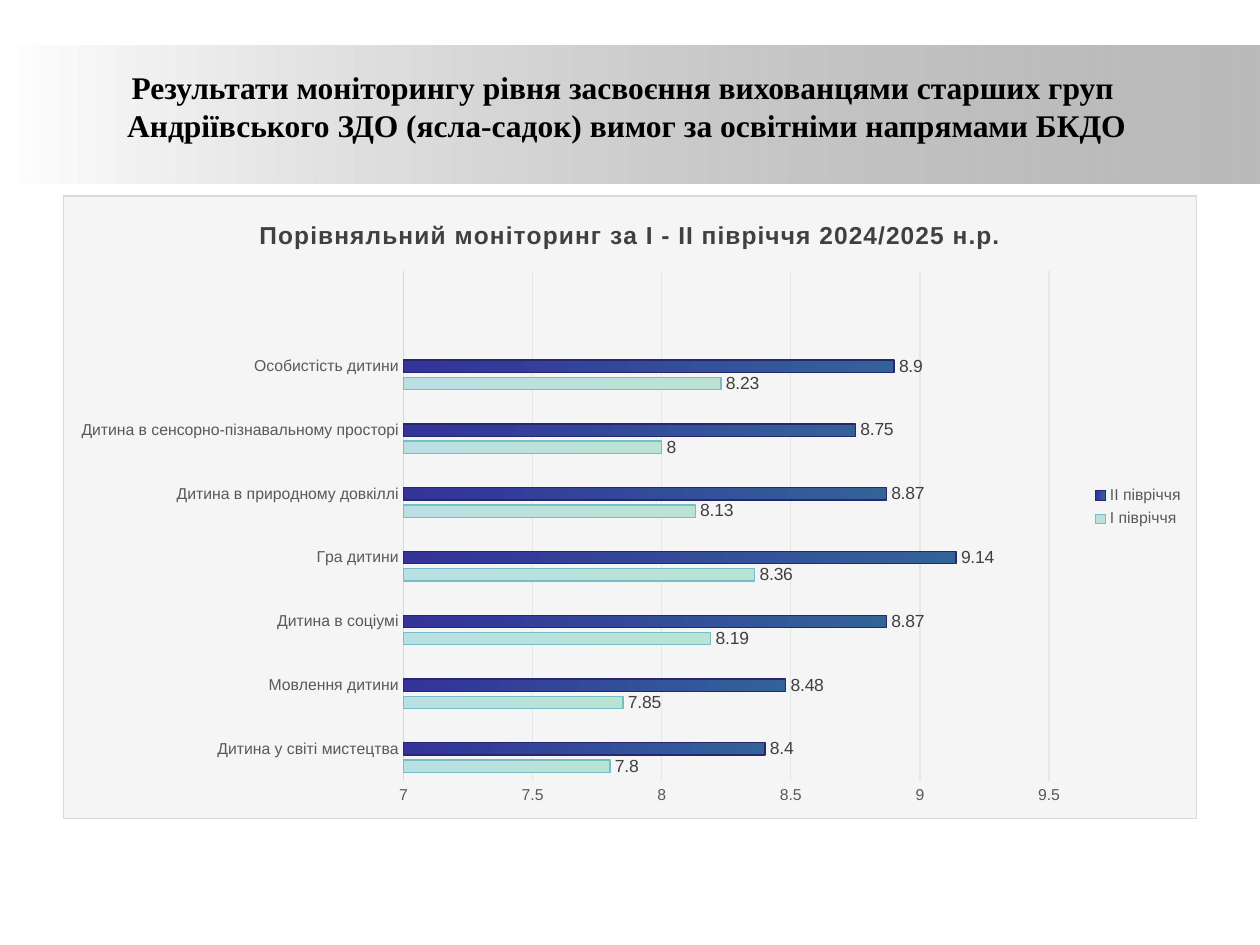
from lxml import etree
from pptx import Presentation
from pptx.chart.data import CategoryChartData
from pptx.dml.color import RGBColor
from pptx.enum.chart import (XL_CHART_TYPE, XL_LABEL_POSITION,
                             XL_LEGEND_POSITION, XL_TICK_MARK)
from pptx.enum.shapes import MSO_SHAPE
from pptx.enum.text import MSO_ANCHOR, PP_ALIGN
from pptx.oxml import parse_xml
from pptx.oxml.ns import nsdecls, qn
from pptx.util import Inches, Pt

TITLE = ("Результати моніторингу рівня засвоєння вихованцями старших груп \v"
         "Андріївського ЗДО (ясла-садок) вимог за освітніми напрямами БКДО")
HEADING = "Порівняльний моніторинг за І - ІІ півріччя 2024/2025 н.р."
AREAS = ["Дитина у світі мистецтва", "Мовлення дитини", "Дитина в соціумі",
         "Гра дитини", "Дитина в природному довкіллі",
         "Дитина в сенсорно-пізнавальному просторі", "Особистість дитини", ""]
# name, values, gradient start, gradient end, outline
TERMS = [
    ("І півріччя", [7.8, 7.85, 8.19, 8.36, 8.13, 8, 8.23, None],
     "BBE3D3", "BBE0E3", "72BFC5"),
    ("ІІ півріччя", [8.4, 8.48, 8.87, 9.14, 8.87, 8.75, 8.9, None],
     "336299", "333399", "262673"),
    ("Ряди 3", [None] * 8, "FFFFFF", "FFFFFF", "BFBFBF"),
]


def rgb(code):
    return RGBColor.from_string(code)


def set_font(font, size, color, bold=False, name="Arial"):
    font.size, font.bold, font.name = Pt(size), bold, name
    font.color.rgb = rgb(color)


def set_line(line, color):
    line.color.rgb = rgb(color)
    line.width = Pt(0.75)


def set_gradient(fill, start, end, angle):
    fill.gradient()
    fill.gradient_angle = angle
    for stop, color, place in zip(fill.gradient_stops, (start, end), (0, 1)):
        stop.color.rgb = rgb(color)
        stop.position = place


def add_band(slide):
    """Add the grey fade behind the title."""
    band = slide.shapes.add_shape(MSO_SHAPE.RECTANGLE, Inches(0), Inches(0.36),
                                  Inches(10), Inches(1.1))
    band.shadow.inherit = False
    band.line.fill.background()
    set_gradient(band.fill, "FFFFFF", "808080", 0)
    end = band._element.spPr.findall(".//" + qn("a:srgbClr"))[-1]
    etree.SubElement(end, qn("a:alpha")).set("val", "54000")
    slide.shapes._spTree.insert(2, band._element)


def set_title(slide):
    title = slide.shapes.title
    title.left, title.top = Inches(0.5), Inches(0.13)
    title.width, title.height = Inches(8.95), Inches(1.42)
    frame = title.text_frame
    frame.text = TITLE
    frame.word_wrap = True
    frame.vertical_anchor = MSO_ANCHOR.MIDDLE
    para = frame.paragraphs[0]
    para.alignment = PP_ALIGN.CENTER
    for run in para.runs:
        set_font(run.font, 18, "000000", True, "Times New Roman")


def style_axes(chart):
    areas, scale = chart.category_axis, chart.value_axis
    for axis in (areas, scale):
        axis.major_tick_mark = axis.minor_tick_mark = XL_TICK_MARK.NONE
        set_font(axis.tick_labels.font, 9, "595959")
    set_line(areas.format.line, "D9D9D9")
    scale.format.line.fill.background()
    scale.minimum_scale, scale.maximum_scale = 7, 9.5
    scale.major_unit = 0.5
    scale.has_major_gridlines = True
    set_line(scale.major_gridlines.format.line, "E6E6E6")


def style_bars(plot):
    plot.gap_width, plot.overlap = 140, -40
    plot.vary_by_categories = False
    for bars, (_, _, start, end, edge) in zip(plot.series, TERMS):
        set_gradient(bars.format.fill, start, end, 180)
        set_line(bars.format.line, edge)
        labels = bars.data_labels
        labels.show_value = True
        labels.position = XL_LABEL_POSITION.OUTSIDE_END
        set_font(labels.font, 10, "404040")


def set_heading(chart):
    chart.has_title = True
    frame = chart.chart_title.text_frame
    frame.text = HEADING
    run = frame.paragraphs[0].runs[0]
    set_font(run.font, 14, "404040", True)
    run._r.get_or_add_rPr().set("spc", "50")
    chart.chart_title.include_in_layout = False


def set_legend(chart):
    """Show the legend without the entry of the empty series."""
    chart.has_legend = True
    legend = chart.legend
    legend.position = XL_LEGEND_POSITION.RIGHT
    legend.include_in_layout = False
    set_font(legend.font, 9, "595959")
    legend._element.find(qn("c:legendPos")).addnext(parse_xml(
        f'<c:legendEntry {nsdecls("c")}><c:idx val="0"/>'
        '<c:delete val="1"/></c:legendEntry>'))


def set_layout(chart, x, y, w, h):
    """Place the inner plot area, in fractions of the chart."""
    area = chart._chartSpace.chart.plotArea
    for old in area.findall(qn("c:layout")):
        area.remove(old)
    sizes = "".join(f'<c:{tag} val="{val}"/>' for tag, val in
                    zip("xywh", (x, y, w, h)))
    area.insert(0, parse_xml(
        f'<c:layout {nsdecls("c")}><c:manualLayout>'
        '<c:layoutTarget val="inner"/><c:xMode val="edge"/>'
        f'<c:yMode val="edge"/>{sizes}</c:manualLayout></c:layout>'))


def set_back(chart):
    space = chart._chartSpace
    space.find(qn("c:txPr")).addprevious(parse_xml(
        f'<c:spPr {nsdecls("c", "a")}>'
        '<a:solidFill><a:srgbClr val="F5F5F5"/></a:solidFill>'
        '<a:ln w="9525"><a:solidFill><a:srgbClr val="D9D9D9"/></a:solidFill>'
        '</a:ln></c:spPr>'))


def add_scores(slide):
    data = CategoryChartData()
    data.categories = AREAS
    for name, values, *_ in TERMS:
        data.add_series(name, values)
    chart = slide.shapes.add_chart(
        XL_CHART_TYPE.BAR_CLUSTERED, Inches(0.5), Inches(1.55),
        Inches(9), Inches(4.95), data).chart
    set_font(chart.font, 10, "000000")
    set_back(chart)
    set_heading(chart)
    set_legend(chart)
    style_axes(chart)
    style_bars(chart.plots[0])
    set_layout(chart, 0.3, 0.12, 0.57, 0.82)


def main():
    deck = Presentation()
    deck.slide_width, deck.slide_height = Inches(10), Inches(7.5)
    slide = deck.slides.add_slide(deck.slide_layouts[5])
    add_band(slide)
    set_title(slide)
    add_scores(slide)
    deck.save("out.pptx")


if __name__ == "__main__":
    main()
